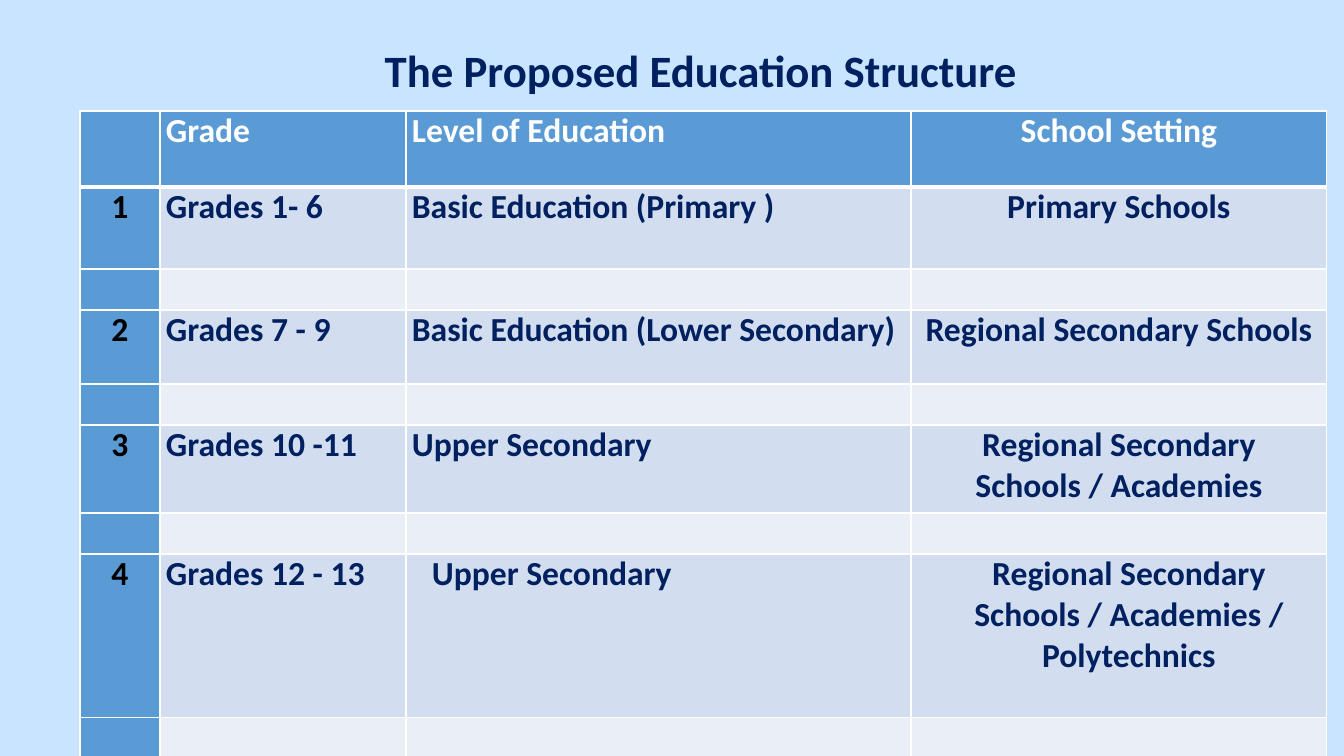
import pptx
import pptx.util
import pptx.dml.color
import pptx.enum.text
import pptx.oxml

COLORS = {"sky": "C9E4FF", "navy": "002060", "blue": "5B9BD5", "white": "FFFFFF",
          "black": "000000", "band": "D2DEEF", "pale": "EAEFF7"}
ALIGN = pptx.enum.text.PP_ALIGN
ANCHOR = pptx.enum.text.MSO_ANCHOR
EMU_PER_PX = 914400 / 100.8

COLUMN_WIDTHS = [80, 246, 505, 416]
ROW_HEIGHTS = [76, 82, 41, 74, 41, 88, 41, 164, 41]
COLUMN_ALIGNS = [ALIGN.CENTER, ALIGN.LEFT, ALIGN.LEFT, ALIGN.CENTER]
HEADER = ["", "Grade", "Level of Education", "School Setting"]
LEVELS = [
    ["1", "Grades 1- 6", "Basic Education (Primary )", "Primary Schools"],
    ["2", "Grades 7 - 9", "Basic Education (Lower Secondary)", "Regional Secondary Schools"],
    ["3", "Grades 10 -11", "Upper Secondary", "Regional Secondary Schools / Academies"],
    ["4", "Grades 12 - 13", "Upper Secondary",
     "Regional Secondary Schools / Academies / Polytechnics"],
]
INDENTED = {(7, 2), (7, 3)}


def px(length):
    return pptx.util.Emu(round(length * EMU_PER_PX))


def color(name):
    return pptx.dml.color.RGBColor.from_string(COLORS[name])


def apply(target, values):
    for name, value in values.items():
        setattr(target, name, value)


class SlideBuilder:
    font = "Calibri"

    def __init__(self, deck):
        self.page = deck.slides.add_slide(deck.slide_layouts[6])

    def background(self, name):
        fill = self.page.background.fill
        fill.solid()
        fill.fore_color.rgb = color(name)

    def add_text(self, para, text, size, ink, **paragraph_format):
        apply(para, paragraph_format)
        span = para.add_run()
        span.text = text
        apply(span.font, {"name": self.font, "size": pptx.util.Pt(size), "bold": True})
        span.font.color.rgb = color(ink)

    def title(self, text, left, top, width, height):
        box = self.page.shapes.add_textbox(px(left), px(top), px(width), px(height))
        apply(box.text_frame, {"word_wrap": True, "vertical_anchor": ANCHOR.MIDDLE})
        self.add_text(box.text_frame.paragraphs[0], text, 32, "navy",
                      alignment=ALIGN.CENTER, line_spacing=0.9)

    def table(self, left, top, widths, heights):
        frame = self.page.shapes.add_table(
            len(heights), len(widths), px(left), px(top), px(sum(widths)), px(sum(heights)))
        for column, width in zip(frame.table.columns, widths):
            column.width = px(width)
        for row, height in zip(frame.table.rows, heights):
            row.height = px(height)
        return frame.table

    def borders(self, cell, **points):
        properties = cell._tc.get_or_add_tcPr()
        for position, side in enumerate("LRTB"):
            line = pptx.oxml.parse_xml(
                '<a:ln%s xmlns:a="http://schemas.openxmlformats.org/drawingml/2006/main" w="%d">'
                '<a:solidFill><a:srgbClr val="%s"/></a:solidFill></a:ln%s>'
                % (side, pptx.util.Pt(points.get(side, 1)), COLORS["white"], side))
            properties.insert(position, line)

    def cell(self, cell, text, fill, ink, align, indent=0, **points):
        apply(cell, {"margin_left": px(6), "margin_right": px(6),
                     "margin_top": 0, "margin_bottom": 0})
        cell.fill.solid()
        cell.fill.fore_color.rgb = color(fill)
        self.borders(cell, **points)
        if text:
            para = cell.text_frame.paragraphs[0]
            self.add_text(para, text, 24, ink, alignment=align)
            if indent:
                para._p.get_or_add_pPr().set("marL", str(px(indent)))


def main():
    deck = pptx.Presentation()
    apply(deck, {"slide_width": px(1344), "slide_height": px(756)})
    builder = SlideBuilder(deck)
    builder.background("sky")
    builder.title("The Proposed Education Structure", 150, 33, 1102, 79)

    rows = [HEADER]
    for level in LEVELS:
        rows += [level, [""] * len(HEADER)]
    grid = builder.table(80, 111, COLUMN_WIDTHS, ROW_HEIGHTS)
    for r, texts in enumerate(rows):
        points = {0: {"B": 3}, 1: {"T": 3}}.get(r, {})
        for c, text in enumerate(texts):
            if r == 0:
                fill, ink = "blue", "white"
            elif c == 0:
                fill, ink = "blue", "black"
            else:
                fill, ink = ("band" if r % 2 else "pale"), "navy"
            builder.cell(grid.cell(r, c), text, fill, ink, COLUMN_ALIGNS[c],
                         20 if (r, c) in INDENTED else 0, **points)
    deck.save("out.pptx")


if __name__ == "__main__":
    main()
